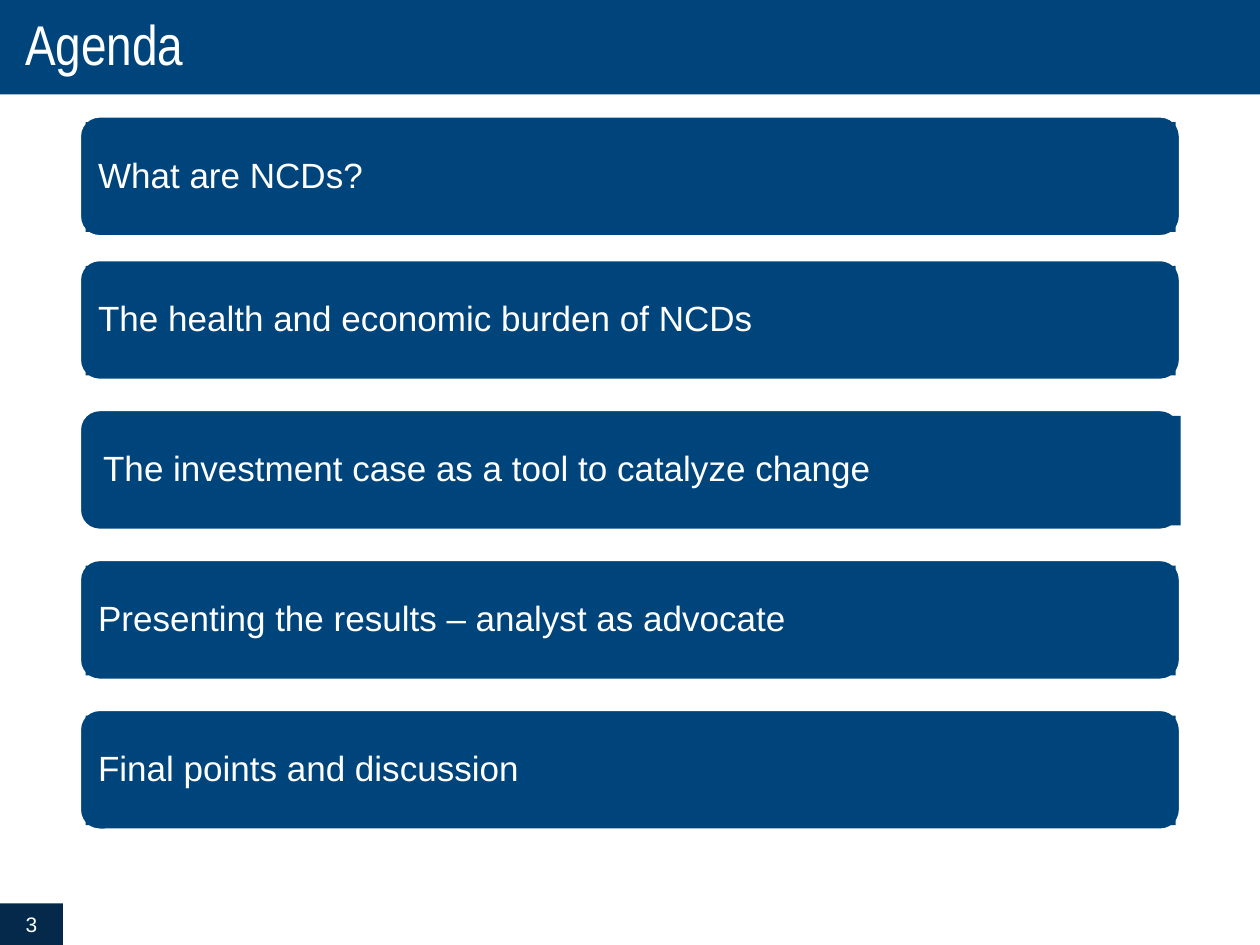
from pptx import Presentation
from pptx.dml.color import RGBColor
from pptx.enum import shapes, text
from pptx import util as u

COLORS = {"blue": "00447C", "navy": "04294A", "white": "FFFFFF"}
AGENDA = [
    "What are NCDs?",
    "The health and economic burden of NCDs",
    "The investment case as a tool to catalyze change",
    "Presenting the results – analyst as advocate",
    "Final points and discussion",
]
BAR_LEFT, BAR_WIDTH, BAR_HEIGHT = 0.63, 8.74, 0.96
LABEL_WIDTH, LABEL_HEIGHT, LABEL_INSET = 8.65, 0.87, 0.05
FIRST_TOP, SECOND_TOP, PITCH = 0.92, 2.06, 1.19
SHIFTED_ITEM = 2  # this label sits against the right edge of its bar


class SlideBuilder:
    def __init__(self, slide):
        self.slide = slide
        self.font = "Arial"

    def color(self, name):
        return RGBColor.from_string(COLORS[name])

    def block(self, parent, kind, bounds, fill, outline=None):
        """Add a filled shape to the slide or to a group; bounds are in inches."""
        box = parent.shapes.add_shape(kind, *(u.Inches(value) for value in bounds))
        box.shadow.inherit = False
        box.fill.solid()
        box.fill.fore_color.rgb = self.color(fill)
        if outline:
            box.line.color.rgb = self.color(outline)
            box.line.width = u.Pt(2)
        else:
            box.line.fill.background()
        return box

    def label(self, box, words, size, font=None, inset=0.1,
              align=text.PP_ALIGN.LEFT, spacing=0.9):
        frame = box.text_frame
        frame.text = words
        frame.word_wrap = True
        frame.vertical_anchor = text.MSO_ANCHOR.MIDDLE
        frame.margin_left = frame.margin_right = u.Inches(inset)
        frame.margin_top = frame.margin_bottom = u.Inches(0.1)
        para = frame.paragraphs[0]
        para.alignment = align
        para.line_spacing = spacing
        span = para.runs[0]
        span.font.name = font or self.font
        span.font.size = u.Pt(size)
        span.font.color.rgb = self.color("white")

    def title(self, words):
        box = self.block(self.slide, shapes.MSO_SHAPE.RECTANGLE, (0, 0, 10, 0.75), "blue")
        self.label(box, words, 32, font="Arial Narrow", inset=0.2)

    def agenda_item(self, words, top, label_left):
        group = self.slide.shapes.add_group_shape()
        self.block(group, shapes.MSO_SHAPE.ROUNDED_RECTANGLE,
                   (BAR_LEFT, top, BAR_WIDTH, BAR_HEIGHT), "blue", "white")
        box = self.block(group, shapes.MSO_SHAPE.RECTANGLE,
                         (label_left, top + LABEL_INSET, LABEL_WIDTH, LABEL_HEIGHT), "blue")
        self.label(box, words, 20)

    def page_number(self, number):
        box = self.block(self.slide, shapes.MSO_SHAPE.RECTANGLE, (0, 7.17, 0.5, 0.33), "navy")
        self.label(box, str(number), 12, align=text.PP_ALIGN.CENTER, spacing=1.0)


def main():
    deck = Presentation()
    deck.slide_width, deck.slide_height = u.Inches(10), u.Inches(7.5)
    builder = SlideBuilder(deck.slides.add_slide(deck.slide_layouts[6]))

    builder.title("Agenda")
    for index, words in enumerate(AGENDA):
        top = SECOND_TOP + (index - 1) * PITCH if index else FIRST_TOP
        if index == SHIFTED_ITEM:
            label_left = BAR_LEFT + BAR_WIDTH - LABEL_WIDTH
        else:
            label_left = BAR_LEFT + LABEL_INSET
        builder.agenda_item(words, top, label_left)
    builder.page_number(3)

    deck.save("out.pptx")


if __name__ == "__main__":
    main()
